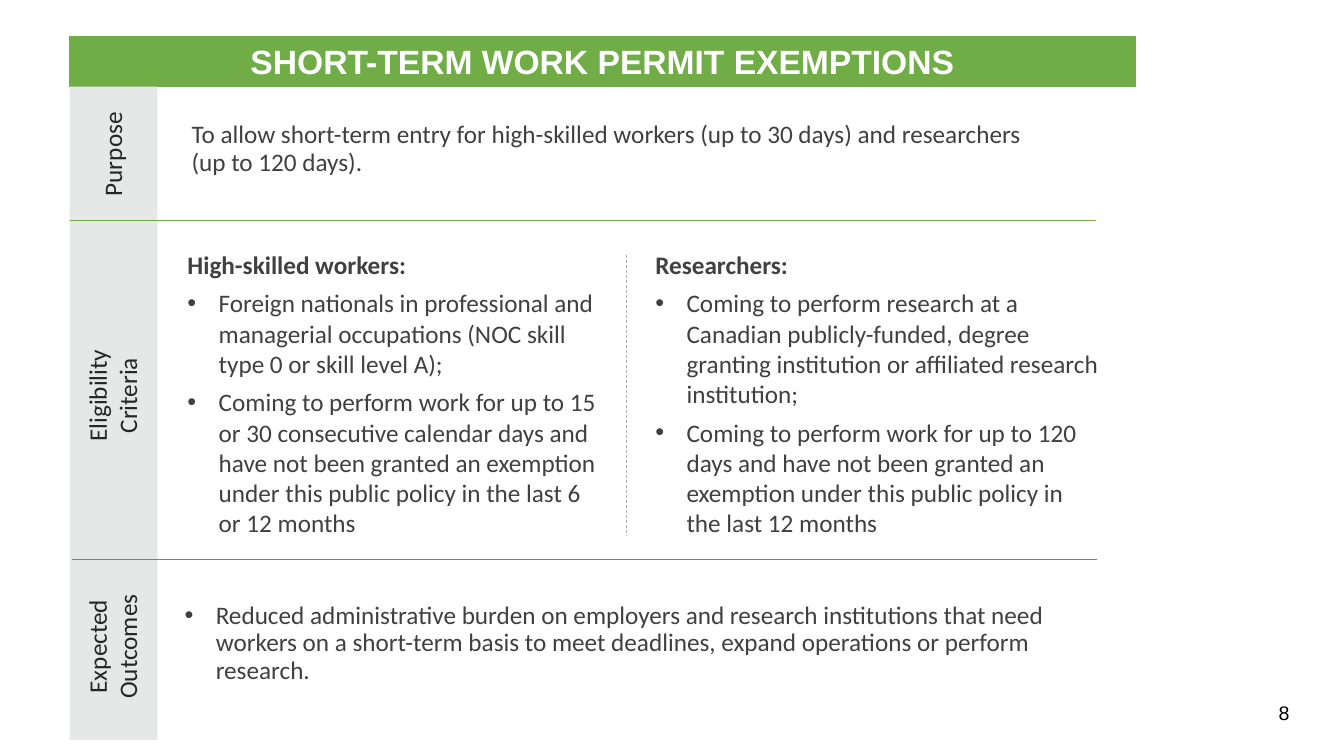
from lxml.etree import SubElement
from pptx import Presentation
from pptx.dml.color import RGBColor
from pptx.enum.dml import MSO_LINE
from pptx.enum.shapes import MSO_CONNECTOR, MSO_SHAPE
from pptx.enum.text import MSO_ANCHOR, MSO_AUTO_SIZE, PP_ALIGN
from pptx.oxml.ns import qn
from pptx.util import Inches, Pt

WIDTH, HEIGHT = 13.33, 7.5
GREEN = RGBColor(0x70, 0xAD, 0x47)
BAND_GREY = RGBColor(0xE6, 0xE7, 0xE7)
RULE_GREY = RGBColor(0x7F, 0x7F, 0x7F)
DASH_GREY = RGBColor(0xAF, 0xAB, 0xAB)
LABEL_GREY = RGBColor(0x26, 0x26, 0x26)
BODY_GREY = RGBColor(0x40, 0x40, 0x40)
WHITE = RGBColor(0xFF, 0xFF, 0xFF)
BLACK = RGBColor(0, 0, 0)

TITLE_FONT = {"name": "Arial", "size": Pt(24), "bold": True}
NUMBER_FONT = {"name": "Arial", "size": Pt(14), "bold": False}
TEXT_FONT = {"name": "Calibri", "size": Pt(18), "bold": False}
HEADING_FONT = {**TEXT_FONT, "bold": True}
FRAME_FORMAT = {
    "word_wrap": True,
    "auto_size": MSO_AUTO_SIZE.NONE,
    "margin_left": Inches(0.1),
    "margin_right": Inches(0.1),
    "margin_top": Inches(0.05),
    "margin_bottom": Inches(0.05),
}

LABELS = [
    ("Purpose", 20.4, 9.9, 5.33),
    ("Eligibility Criteria", 52.33, 12.08, 9.47),
    ("Expected Outcomes", 85.53, 12.98, 9.47),
]
PURPOSE = (
    "To allow short-term entry for high-skilled workers (up to 30 days) "
    "and researchers (up to 120 days)."
)
WORKERS = [
    "Foreign nationals in professional and managerial occupations "
    "(NOC skill type 0 or skill level A);",
    "Coming to perform work for up to 15 or 30 consecutive calendar days and have "
    "not been granted an exemption under this public policy in the last 6 or 12 months",
]
RESEARCHERS = [
    "Coming to perform research at a Canadian publicly-funded, degree granting "
    "institution or affiliated research institution;",
    "Coming to perform work for up to 120 days and have not been granted an "
    "exemption under this public policy in the last 12 months",
]
OUTCOMES = [
    "Reduced administrative burden on employers and research institutions that need "
    "workers on a short-term basis to meet deadlines, expand operations or perform research."
]


def across(share):
    return Inches(WIDTH * share / 100)


def down(share):
    return Inches(HEIGHT * share / 100)


def apply(target, values):
    for name, value in values.items():
        setattr(target, name, value)


def place(shape, left, top, width, height):
    apply(shape, {"left": across(left), "top": down(top),
                  "width": across(width), "height": down(height)})


def prepare_frame(shape, anchor):
    apply(shape.text_frame, {**FRAME_FORMAT, "vertical_anchor": anchor})
    return shape.text_frame


def write(paragraph, text, font, color, **spacing):
    paragraph.text = text
    apply(paragraph, {"space_before": Pt(0), "line_spacing": 1.0, **spacing})
    apply(paragraph.font, font)
    paragraph.font.color.rgb = color


def set_bullet(paragraph, bulleted):
    properties = paragraph._p.get_or_add_pPr()
    indent = Inches(0.31) if bulleted else 0
    properties.set("marL", str(indent))
    properties.set("indent", str(-indent))
    if bulleted:
        SubElement(properties, qn("a:buFont"), typeface="Arial")
        SubElement(properties, qn("a:buChar"), char="•")
    else:
        SubElement(properties, qn("a:buNone"))


def fill_body(shape, box, plain=(), bullets=(), plain_font=TEXT_FONT, line_spacing=1.0):
    place(shape, *box)
    frame = prepare_frame(shape, MSO_ANCHOR.TOP)
    items = [(text, False) for text in plain] + [(text, True) for text in bullets]
    for index, (text, bulleted) in enumerate(items):
        paragraph = frame.add_paragraph() if index else frame.paragraphs[0]
        set_bullet(paragraph, bulleted)
        write(paragraph, text, TEXT_FONT if bulleted else plain_font, BODY_GREY,
              space_after=Pt(6), line_spacing=line_spacing, alignment=PP_ALIGN.LEFT)


def fill_title(shape, text):
    place(shape, 5.18, 4.8, 79.29, 6.67)
    shape.fill.solid()
    shape.fill.fore_color.rgb = GREEN
    shape.line.color.rgb = GREEN
    shape.line.width = Pt(0.75)
    frame = prepare_frame(shape, MSO_ANCHOR.MIDDLE)
    write(frame.paragraphs[0], text, TITLE_FONT, WHITE, alignment=PP_ALIGN.CENTER)


def add_band(slide):
    band = slide.shapes.add_shape(MSO_SHAPE.RECTANGLE, across(5.18), down(11.47),
                                  across(6.53), down(86.4))
    band.shadow.inherit = False
    band.fill.solid()
    band.fill.fore_color.rgb = BAND_GREY
    band.line.fill.background()


def add_text(slide, text, box, font, color, alignment, rotation=0):
    shape = slide.shapes.add_textbox(0, 0, 0, 0)
    place(shape, *box)
    shape.rotation = rotation
    frame = prepare_frame(shape, MSO_ANCHOR.MIDDLE)
    write(frame.paragraphs[0], text, font, color, alignment=alignment)


def add_label(slide, text, middle, length, thickness):
    box = (8.33 - length / 2, middle - thickness / 2, length, thickness)
    add_text(slide, text, box, TEXT_FONT, LABEL_GREY, PP_ALIGN.CENTER, 270)


def add_rule(slide, start, end, color, dash=None):
    rule = slide.shapes.add_connector(MSO_CONNECTOR.STRAIGHT, across(start[0]), down(start[1]),
                                      across(end[0]), down(end[1]))
    rule.line.color.rgb = color
    rule.line.width = Pt(0.5)
    if dash:
        rule.line.dash_style = dash
    SubElement(rule._element.spPr, qn("a:effectLst"))


def main():
    presentation = Presentation()
    presentation.slide_width = Inches(WIDTH)
    presentation.slide_height = Inches(HEIGHT)
    slide = presentation.slides.add_slide(presentation.slide_layouts.get_by_name("Comparison"))
    title, purpose, workers, outcomes, researchers = slide.placeholders

    fill_title(title, "SHORT-TERM WORK PERMIT EXEMPTIONS")
    fill_body(purpose, (13.5, 15.47, 63.47, 8.67), plain=[PURPOSE], line_spacing=0.9)
    fill_body(workers, (13.2, 32.27, 32.03, 40), ["High-skilled workers:"], WORKERS, HEADING_FONT)
    fill_body(researchers, (48.01, 32.27, 34.73, 40), ["Researchers:"], RESEARCHERS, HEADING_FONT)
    fill_body(outcomes, (12.98, 79.07, 69.77, 12.27), bullets=OUTCOMES, line_spacing=0.9)

    add_band(slide)
    for label in LABELS:
        add_label(slide, *label)
    add_rule(slide, (5.18, 29.2), (81.55, 29.2), GREEN)
    add_rule(slide, (5.33, 74), (81.62, 74), RULE_GREY)
    add_rule(slide, (46.59, 33.73), (46.59, 70.93), DASH_GREY, MSO_LINE.DASH)
    add_text(slide, "8", (82.9, 92, 13.8, 4.53), NUMBER_FONT, BLACK, PP_ALIGN.RIGHT)
    presentation.save("out.pptx")


if __name__ == "__main__":
    main()
